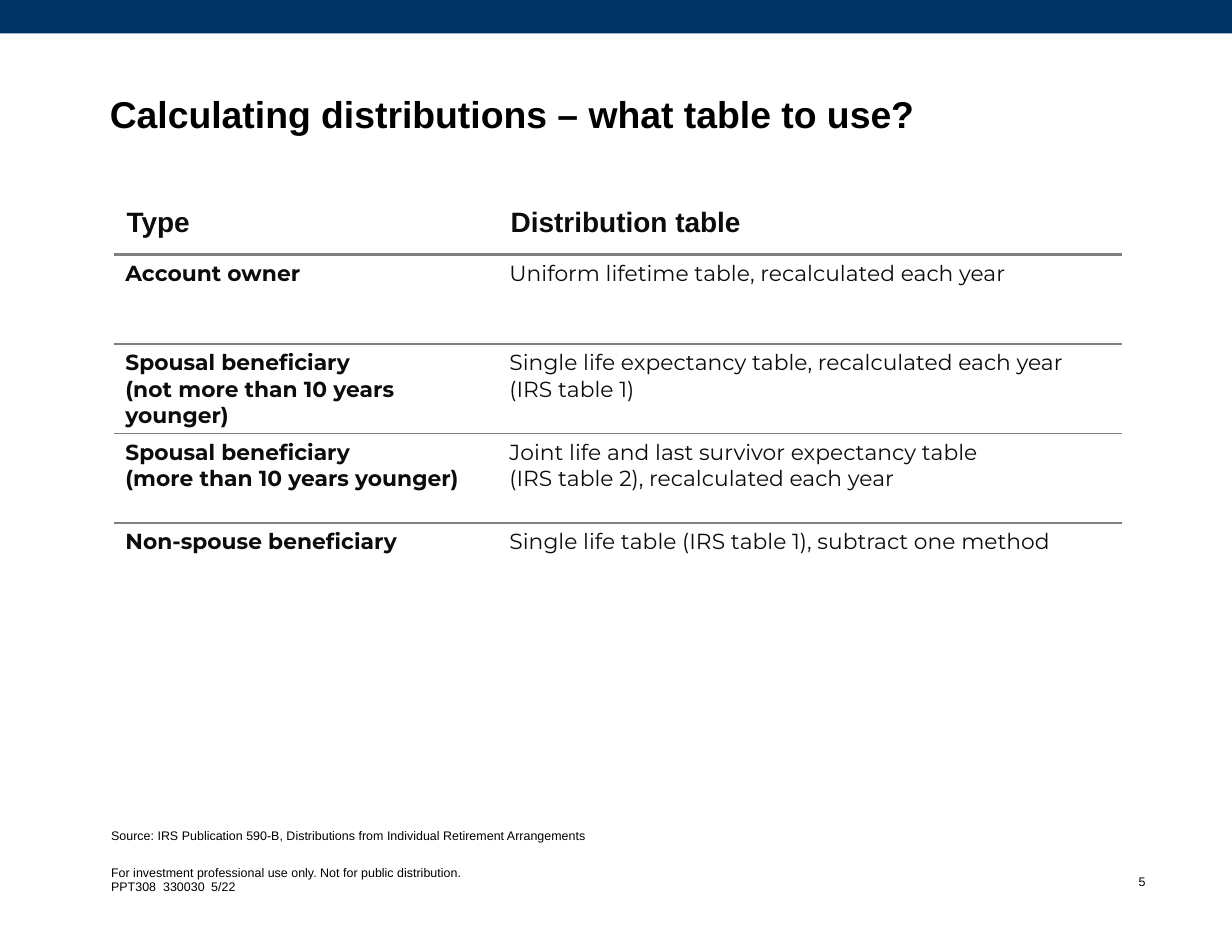
from lxml.etree import SubElement
from pptx import Presentation
from pptx.dml.color import RGBColor
from pptx.enum.shapes import MSO_SHAPE as SHAPE
from pptx.enum.text import MSO_ANCHOR as ANCHOR, PP_ALIGN as ALIGN
from pptx.oxml import parse_xml
from pptx.oxml.ns import nsdecls, qn
from pptx.util import Cm, Pt

NAVY = RGBColor(0x00, 0x33, 0x65)
BLACK = RGBColor(0x00, 0x00, 0x00)
INK = RGBColor(0x0C, 0x0C, 0x0C)
GREY = RGBColor(0x80, 0x80, 0x80)

TITLE = "Calculating distributions – what table to use?"
SOURCE = "Source: IRS Publication 590-B, Distributions from Individual Retirement Arrangements"
FOOTER = ["For investment professional use only. Not for public distribution.",
          "PPT308\t330030\t5/22"]
CODE_TABS = (1.18, 2.27)
PAGE = "5"

# "\v" is a line break inside a paragraph
ROWS = [
    ("Type", "Distribution table"),
    ("Account owner", "Uniform lifetime table, recalculated each year"),
    ("Spousal beneficiary\v(not more than 10 years younger)",
     "Single life expectancy table, recalculated each year\v(IRS table 1)"),
    ("Spousal beneficiary\v(more than 10 years younger)",
     "Joint life and last survivor expectancy table\v(IRS table 2), recalculated each year"),
    ("Non-spouse beneficiary", "Single life table (IRS table 1), subtract one method"),
]
COL_WIDTHS = (8.71, 14.15)
HEADER_HEIGHT, ROW_HEIGHT = 1.5, 2.03
HEADER_RULE, ROW_RULE = 2.25, 1


def set_font(p, size, color, name="Arial", bold=False):
    f = p.font
    f.name, f.size, f.bold = name, Pt(size), bold
    f.color.rgb = color


def add_text(slide, box, lines, size, bold=False, anchor=ANCHOR.TOP, wrap=True,
             margins=(0.28, 0.15, 0.28, 0.15)):
    tf = slide.shapes.add_textbox(*map(Cm, box)).text_frame
    tf.word_wrap, tf.vertical_anchor = wrap, anchor
    tf.margin_left, tf.margin_top, tf.margin_right, tf.margin_bottom = map(Cm, margins)
    tf.text = "\n".join(lines)
    for p in tf.paragraphs:
        set_font(p, size, BLACK, bold=bold)
    return tf


def set_tabs(p, stops):
    tabs = parse_xml(f"<a:tabLst {nsdecls('a')}/>")
    for stop in stops:
        SubElement(tabs, qn("a:tab"), pos=str(Cm(stop)), algn="l")
    p._p.get_or_add_pPr().insert(0, tabs)


def set_borders(cell, top, bottom):
    """Rule the top and bottom edges, in points; a width of 0 means no line."""
    tc_pr = cell._tc.get_or_add_tcPr()
    for i, (edge, width) in enumerate((("L", 0), ("R", 0), ("T", top), ("B", bottom))):
        fill = f'<a:solidFill><a:srgbClr val="{GREY}"/></a:solidFill>' if width else "<a:noFill/>"
        tc_pr.insert(i, parse_xml(
            f'<a:ln{edge} {nsdecls("a")} w="{Pt(width)}">{fill}</a:ln{edge}>'))


def add_distribution_table(slide):
    heights = [HEADER_HEIGHT] + [ROW_HEIGHT] * (len(ROWS) - 1)
    rules = [0, HEADER_RULE] + [ROW_RULE] * (len(ROWS) - 2) + [0]
    table = slide.shapes.add_table(
        len(ROWS), len(COL_WIDTHS), Cm(2.59), Cm(4.27),
        Cm(sum(COL_WIDTHS)), Cm(sum(heights))).table
    table.first_row = table.horz_banding = False
    for column, width in zip(table.columns, COL_WIDTHS):
        column.width = Cm(width)
    for i, (row, height) in enumerate(zip(table.rows, heights)):
        row.height = Cm(height)
        for j, cell in enumerate(row.cells):
            cell.fill.background()
            set_borders(cell, rules[i], rules[i + 1])
            cell.text_frame.text = ROWS[i][j]
            p = cell.text_frame.paragraphs[0]
            if i == 0:
                cell.vertical_anchor = ANCHOR.MIDDLE
                cell.margin_left = cell.margin_right = Cm(0.28)
                cell.margin_top = cell.margin_bottom = Cm(0.2)
                p.line_spacing = 1.1
                set_font(p, 18, INK, bold=True)
            else:
                set_font(p, 14, INK, "Montserrat", bold=j == 0)


def main():
    prs = Presentation()
    prs.slide_width, prs.slide_height = Cm(27.94), Cm(21.59)
    slide = prs.slides.add_slide(prs.slide_layouts[6])

    bar = slide.shapes.add_shape(SHAPE.RECTANGLE, 0, 0, prs.slide_width, Cm(0.76))
    bar.shadow.inherit = False
    bar.fill.solid()
    bar.fill.fore_color.rgb = NAVY
    bar.line.fill.background()

    title = add_text(slide, (2.21, 2.03, 23.22, 0.89), [TITLE], 24, bold=True)
    title.paragraphs[0].line_spacing = 0.9
    add_distribution_table(slide)
    add_text(slide, (2.24, 18.62, 23.24, 0.64), [SOURCE], 8, anchor=ANCHOR.BOTTOM)
    footer = add_text(slide, (2.24, 19.46, 8.64, 0.97), FOOTER, 8, wrap=False)
    set_tabs(footer.paragraphs[1], CODE_TABS)
    page = add_text(slide, (25.53, 19.71, 0.58, 0.58), [PAGE], 8,
                    margins=(0, 0.15, 0.13, 0.15))
    page.paragraphs[0].alignment = ALIGN.RIGHT
    page.paragraphs[0].line_spacing = 0.9

    prs.save("out.pptx")


if __name__ == "__main__":
    main()
